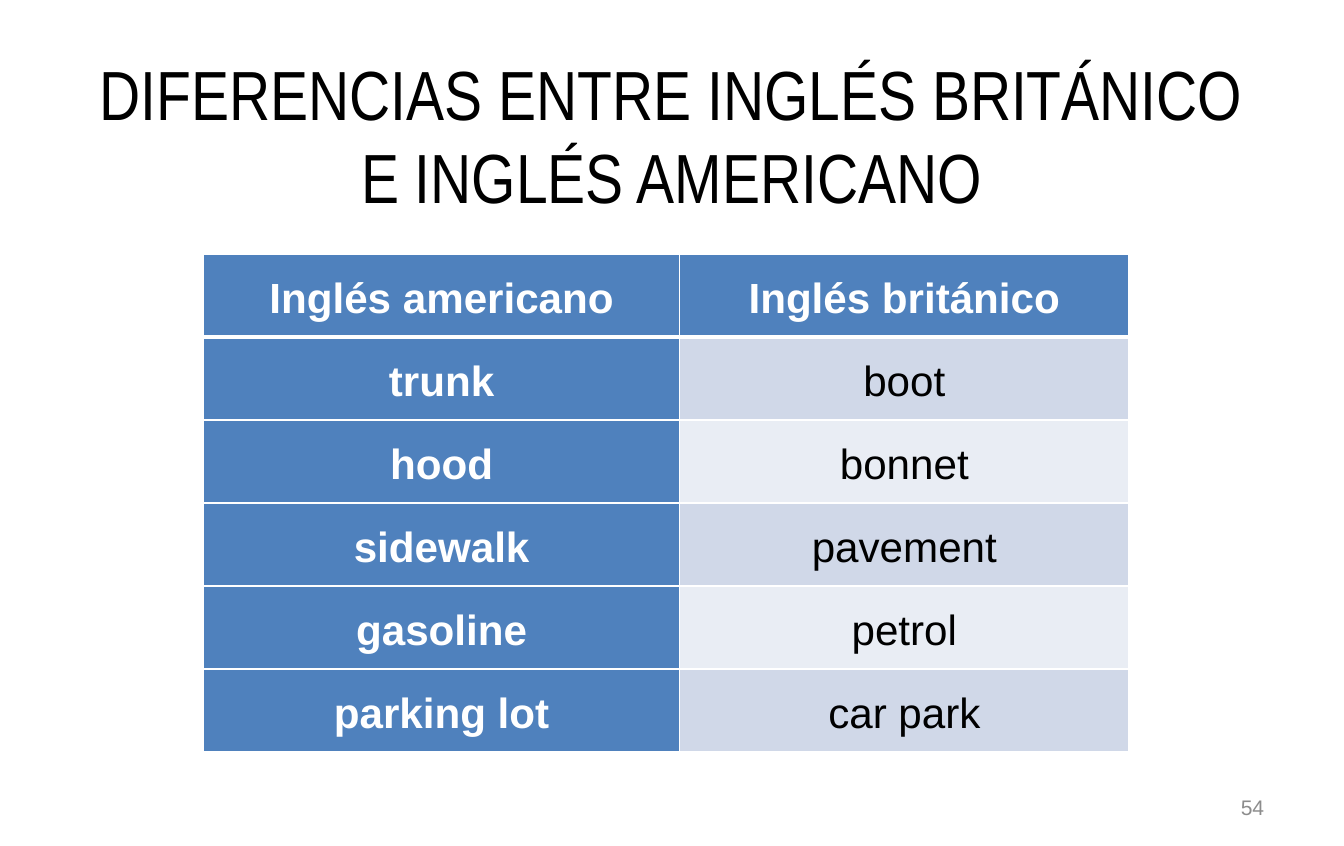
from lxml import etree
from pptx import Presentation
from pptx.dml.color import RGBColor
from pptx.enum.text import MSO_ANCHOR, MSO_AUTO_SIZE, PP_ALIGN
from pptx.oxml.ns import qn
from pptx.util import Pt

CENTER, RIGHT = PP_ALIGN.CENTER, PP_ALIGN.RIGHT
MIDDLE = MSO_ANCHOR.MIDDLE
NO_AUTOFIT = MSO_AUTO_SIZE.NONE

COLORS = {
    "text": "000000",
    "white": "FFFFFF",
    "header": "4F81BD",
    "dark_band": "D0D8E8",
    "light_band": "E9EDF4",
    "number": "8C8C8C",
}
TITLE = "DIFERENCIAS ENTRE INGLÉS BRITÁNICO E INGLÉS AMERICANO"
WORDS = [
    ("Inglés americano", "Inglés británico"),
    ("trunk", "boot"),
    ("hood", "bonnet"),
    ("sidewalk", "pavement"),
    ("gasoline", "petrol"),
    ("parking lot", "car park"),
]
COLUMN_WIDTHS = (271, 256)
ROW_HEIGHT = 47.25


def rgb(name):
    return RGBColor.from_string(COLORS[name])


def write(frame, text, size, color, align, font="Arial", bold=False):
    frame.text = text
    frame.word_wrap = True
    para = frame.paragraphs[0]
    para.alignment = align
    span = para.runs[0]
    span.font.name = font
    span.font.size = Pt(size)
    span.font.bold = bold
    span.font.color.rgb = rgb(color)


def set_title(page):
    title = page.shapes.title
    title.left, title.top, title.width, title.height = Pt(38), Pt(36), Pt(689), Pt(81)
    write(title.text_frame, TITLE, 39.6, "text", CENTER, "Arial Narrow")
    title.text_frame.vertical_anchor = MIDDLE
    title.text_frame.auto_size = NO_AUTOFIT


def add_borders(cell, widths):
    properties = cell._tc.get_or_add_tcPr()
    for side, width in widths.items():
        line = etree.SubElement(properties, qn(f"a:ln{side}"), w=str(Pt(width)))
        fill = etree.SubElement(line, qn("a:solidFill"))
        etree.SubElement(fill, qn("a:srgbClr"), val=COLORS["white"])


def format_cell(cell, text, row, column):
    heading = row == 0 or column == 0
    band = "dark_band" if row % 2 else "light_band"
    write(cell.text_frame, text, 24, "white" if heading else "text", CENTER, bold=heading)
    para = cell.text_frame.paragraphs[0]
    para.line_spacing = 1.15
    para.space_after = Pt(12)
    cell.vertical_anchor = MIDDLE
    cell.margin_left = cell.margin_right = Pt(3.6)
    cell.margin_top = cell.margin_bottom = Pt(3.6)
    add_borders(cell, {"L": 1, "R": 1, "T": 3 if row == 1 else 1, "B": 3 if row == 0 else 1})
    cell.fill.solid()
    cell.fill.fore_color.rgb = rgb("header" if heading else band)


def add_word_table(page):
    frame = page.shapes.add_table(
        len(WORDS), len(COLUMN_WIDTHS), Pt(116), Pt(144.75),
        Pt(sum(COLUMN_WIDTHS)), Pt(ROW_HEIGHT * len(WORDS)))
    table = frame.table
    table.horz_banding = False
    table.first_col = True
    for column, width in zip(table.columns, COLUMN_WIDTHS):
        column.width = Pt(width)
    for row, pair in enumerate(WORDS):
        table.rows[row].height = Pt(ROW_HEIGHT)
        for column, word in enumerate(pair):
            format_cell(table.cell(row, column), word, row, column)


def add_page_number(page, number):
    box = page.shapes.add_textbox(Pt(548.5), Pt(446.5), Pt(178.5), Pt(26))
    write(box.text_frame, number, 12, "number", RIGHT)
    box.text_frame.vertical_anchor = MIDDLE


def main():
    """Build the slide comparing American and British English words."""
    deck = Presentation()
    deck.slide_width, deck.slide_height = Pt(765.36), Pt(481.68)
    page = deck.slides.add_slide(deck.slide_layouts[5])
    set_title(page)
    add_word_table(page)
    add_page_number(page, "54")
    deck.save("out.pptx")


if __name__ == "__main__":
    main()
